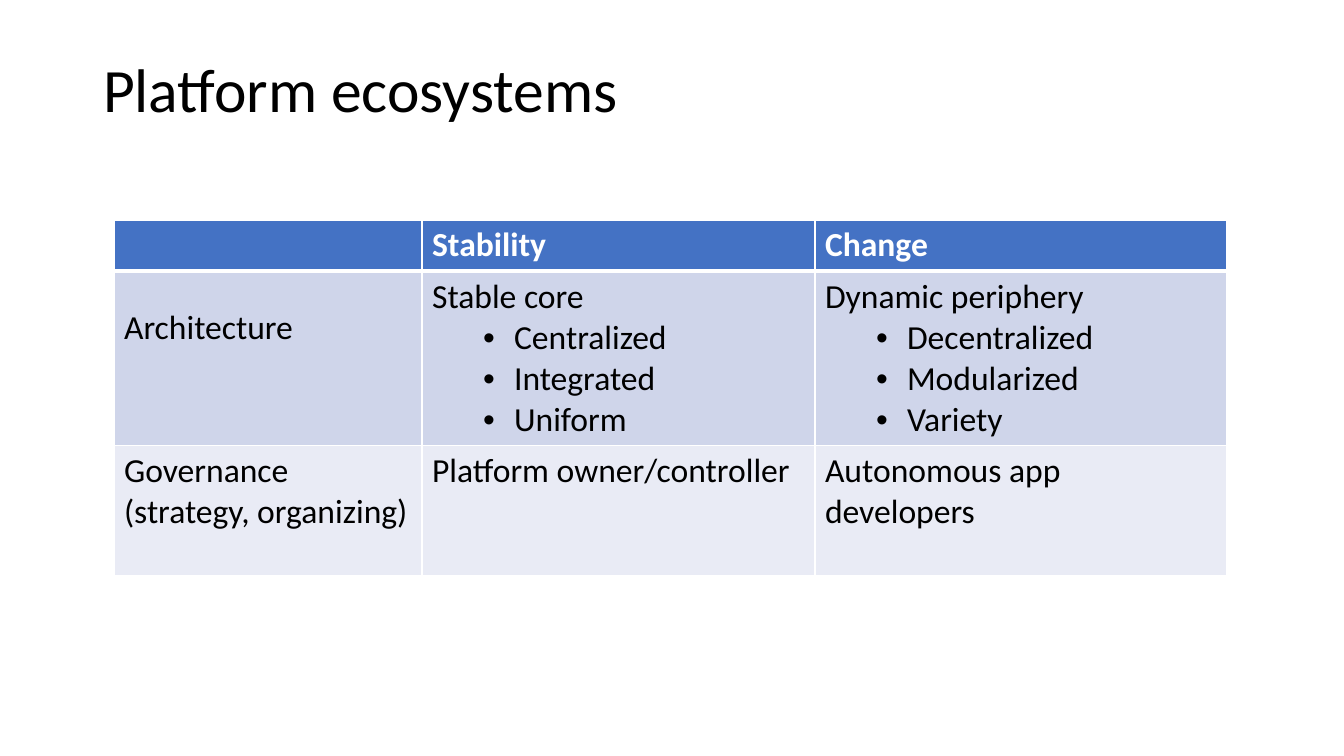
from lxml.etree import SubElement
from pptx import Presentation
from pptx.dml.color import RGBColor
from pptx.enum.text import MSO_ANCHOR as Anchor, MSO_AUTO_SIZE as AutoSize, PP_ALIGN as Align
from pptx.oxml.ns import qn
from pptx.util import Pt

SLIDE_W, SLIDE_H = 1344, 756
EMU_PER_PX = 12192000 / SLIDE_W
FONT = "Calibri"
BLACK = RGBColor(0x00, 0x00, 0x00)
WHITE = RGBColor(0xFF, 0xFF, 0xFF)
HEADER_BLUE = RGBColor(0x44, 0x72, 0xC4)
BAND_DARK = RGBColor(0xCF, 0xD5, 0xEA)
BAND_LIGHT = RGBColor(0xE9, 0xEB, 0xF5)

TITLE_BOX = (93, 40, 1159, 105)
TABLE_BOX = (114, 220, 1113, 354)
COLUMN_WIDTHS = (308, 393, 412)
ROW_HEIGHTS = (51, 173, 130)
ROW_FILLS = (HEADER_BLUE, BAND_DARK, BAND_LIGHT)
BULLET_INDENT, BULLET_HANG = 82, 31
ARCHITECTURE_TOP = 36

ECOSYSTEM = (
    ((), ("Stability",), ("Change",)),
    (
        ("Architecture",),
        ("Stable core", "Centralized", "Integrated", "Uniform"),
        ("Dynamic periphery", "Decentralized", "Modularized", "Variety"),
    ),
    (
        ("Governance (strategy, organizing)",),
        ("Platform owner/controller",),
        ("Autonomous app developers",),
    ),
)


def px(length):
    return round(length * EMU_PER_PX)


def write(paragraph, text, size=24, color=BLACK, bold=False, bullet=False, spacing=None):
    paragraph.alignment = Align.LEFT
    if spacing:
        paragraph.line_spacing = spacing
    if bullet:
        paragraph.level = 1
        properties = paragraph._p.get_or_add_pPr()
        properties.set("marL", str(px(BULLET_INDENT)))
        properties.set("indent", str(-px(BULLET_HANG)))
        SubElement(properties, qn("a:buFont")).set("typeface", "Arial")
        SubElement(properties, qn("a:buChar")).set("char", "•")
    run = paragraph.add_run()
    run.text = text
    font = run.font
    font.name, font.size, font.bold = FONT, Pt(size), bold
    font.color.rgb = color


def add_border(cell, side, points):
    line = SubElement(cell._tc.get_or_add_tcPr(), qn(f"a:ln{side}"))
    line.set("w", str(Pt(points)))
    fill = SubElement(line, qn("a:solidFill"))
    SubElement(fill, qn("a:srgbClr")).set("val", str(WHITE))


def fill_cell(cell, lines, row):
    header = row == 0
    for side in "LRTB":
        thick = (row, side) in ((0, "B"), (1, "T"))
        add_border(cell, side, 3 if thick else 1)
    cell.fill.solid()
    cell.fill.fore_color.rgb = ROW_FILLS[row]
    frame = cell.text_frame
    for index, text in enumerate(lines):
        paragraph = frame.add_paragraph() if index else frame.paragraphs[0]
        write(paragraph, text, color=WHITE if header else BLACK,
              bold=header, bullet=index > 0)


def place_title(slide, box):
    title = slide.shapes.title
    title.left, title.top, title.width, title.height = map(px, box)
    frame = title.text_frame
    frame.auto_size = AutoSize.NONE
    frame.word_wrap = True
    frame.vertical_anchor = Anchor.MIDDLE
    write(frame.paragraphs[0], "Platform ecosystems", size=44, spacing=0.9)


def place_ecosystem_table(slide, box):
    table = slide.shapes.add_table(
        len(ROW_HEIGHTS), len(COLUMN_WIDTHS), *map(px, box)).table
    for column, width in zip(table.columns, COLUMN_WIDTHS):
        column.width = px(width)
    for row, height in zip(table.rows, ROW_HEIGHTS):
        row.height = px(height)
    for row, entries in enumerate(ECOSYSTEM):
        for column, lines in enumerate(entries):
            fill_cell(table.cell(row, column), lines, row)
    table.cell(1, 0).margin_top = px(ARCHITECTURE_TOP)


def main():
    deck = Presentation()
    deck.slide_width, deck.slide_height = px(SLIDE_W), px(SLIDE_H)
    slide = deck.slides.add_slide(deck.slide_layouts[5])
    place_title(slide, TITLE_BOX)
    place_ecosystem_table(slide, TABLE_BOX)
    deck.save("out.pptx")


if __name__ == "__main__":
    main()
